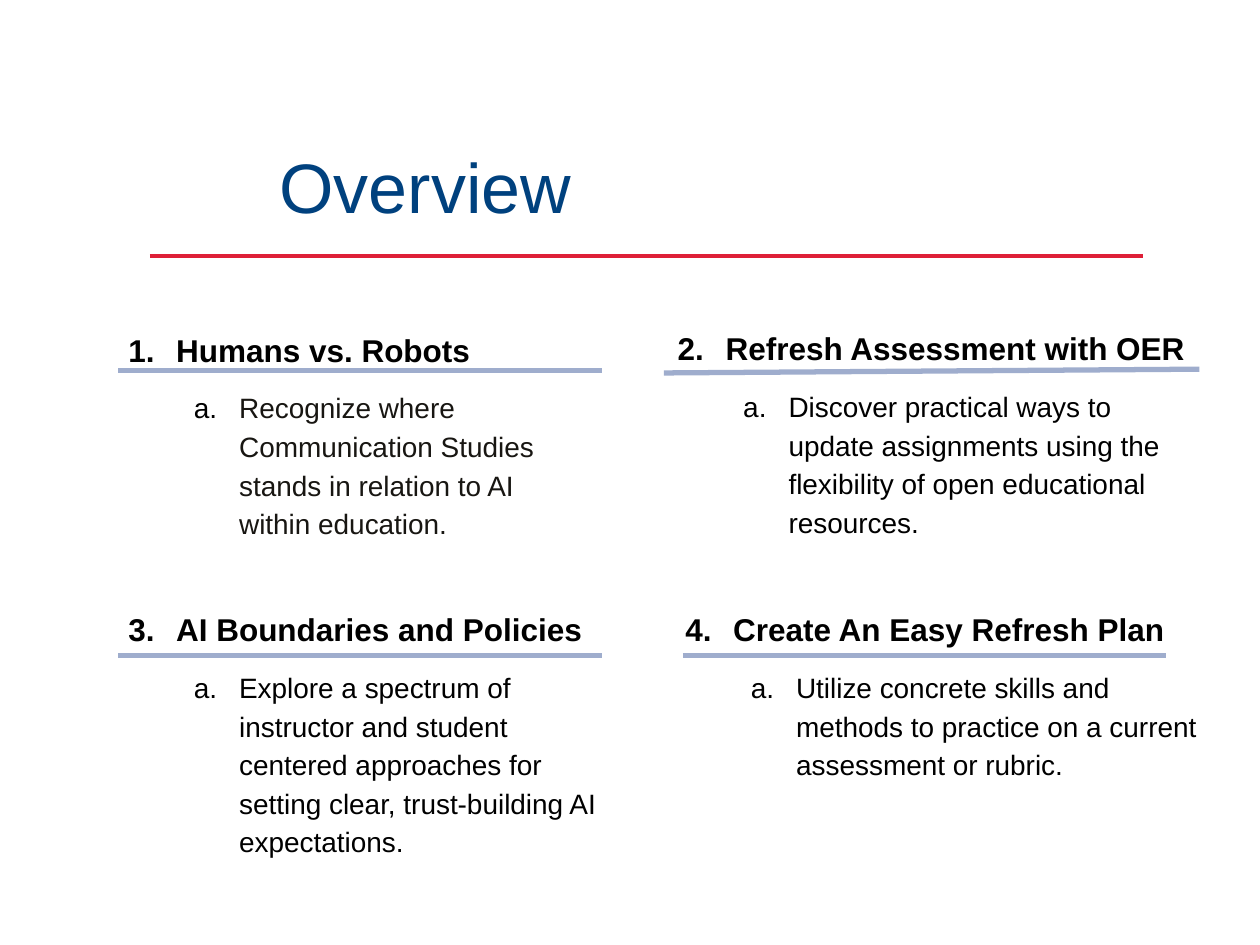
from lxml import etree
from pptx import Presentation
from pptx import util as u
from pptx.dml.color import RGBColor
from pptx.enum import shapes, text
from pptx.oxml.ns import qn

FONT = "Arial"
BLACK, CHARCOAL, NAVY = "000000", "181612", "00417E"
RED, PERIWINKLE = "DE1F37", "9FADCD"

TOPICS = [
    ((0.8, 2.53, 3.94), "Humans vs. Robots", CHARCOAL,
     "Recognize where Communication Studies stands in relation to AI within education."),
    ((5.16, 2.52, 4.48), "Refresh Assessment with OER", BLACK,
     "Discover practical ways to update assignments using the flexibility of "
     "open educational resources."),
    ((0.8, 4.75, 4.23), "AI Boundaries and Policies", BLACK,
     "Explore a spectrum of instructor and student centered approaches for "
     "setting clear, trust-building AI expectations."),
    ((5.22, 4.75, 4.42), "Create An Easy Refresh Plan", BLACK,
     "Utilize concrete skills and methods to practice on a current assessment or rubric."),
]
UNDERLINES = [
    (0.94, 2.94, 4.78, 2.94),
    (5.27, 2.96, 9.52, 2.93),
    (0.94, 5.2, 4.78, 5.2),
    (5.42, 5.2, 9.25, 5.2),
]


def color(value):
    """Turn a hex string into a colour."""
    return RGBColor.from_string(value)


def add_rule(page, ends, value, width):
    """Draw a straight line without shadow."""
    line = page.shapes.add_connector(
        shapes.MSO_CONNECTOR.STRAIGHT, *[u.Inches(end) for end in ends])
    line.line.color.rgb = color(value)
    line.line.width = u.Pt(width)
    etree.SubElement(line._element.spPr, qn("a:effectLst"))


def add_box(page, left, top, width, height):
    """Add a wrapping text box and return its text frame."""
    box = page.shapes.add_textbox(*[u.Inches(n) for n in (left, top, width, height)])
    box.text_frame.word_wrap = True
    return box.text_frame


def format_text(para, size, value, bold=False, spacing=1.15):
    """Set the line spacing and font of a paragraph's runs."""
    para.line_spacing = spacing
    for span in para.runs:
        span.font.name = FONT
        span.font.size = u.Pt(size)
        span.font.bold = bold
        span.font.color.rgb = color(value)


def number_paragraph(para, scheme, start, margin, indent):
    """Give a paragraph an automatic number and a hanging indent."""
    props = para._p.get_or_add_pPr()
    props.set("marL", str(u.Inches(margin)))
    props.set("indent", str(u.Inches(indent)))
    bullet_color = etree.SubElement(props, qn("a:buClr"))
    etree.SubElement(bullet_color, qn("a:srgbClr"), val=BLACK)
    etree.SubElement(props, qn("a:buFont"), typeface=FONT)
    etree.SubElement(props, qn("a:buAutoNum"), type=scheme, startAt=str(start))


def add_title(page, wording):
    """Add the slide title."""
    frame = add_box(page, 2.12, 0.88, 7.88, 0.98)
    frame.vertical_anchor = text.MSO_ANCHOR.BOTTOM
    frame.text = wording
    format_text(frame.paragraphs[0], 40, NAVY, spacing=0.9)


def add_topic(page, number, place, heading, value, detail):
    """Add a numbered heading with its lettered detail."""
    frame = add_box(page, *place, 1.54)
    para = frame.paragraphs[0]
    para.text = heading
    number_paragraph(para, "arabicPeriod", number, 0.5, -0.38)
    format_text(para, 18, BLACK, bold=True)
    para = frame.add_paragraph()
    para.text = detail
    para.level = 1
    number_paragraph(para, "alphaLcPeriod", 1, 1, -0.36)
    para.space_before = u.Pt(10)
    format_text(para, 16, value)


def main():
    """Build the overview slide."""
    deck = Presentation()
    deck.slide_width, deck.slide_height = u.Inches(10), u.Inches(7.5)
    page = deck.slides.add_slide(deck.slide_layouts[6])
    add_rule(page, (1.19, 2.03, 9.07, 2.03), RED, 2.5)
    add_title(page, "Overview")
    for number, topic in enumerate(TOPICS, 1):
        add_topic(page, number, *topic)
    for ends in UNDERLINES:
        add_rule(page, ends, PERIWINKLE, 3)
    deck.save("out.pptx")


if __name__ == "__main__":
    main()
